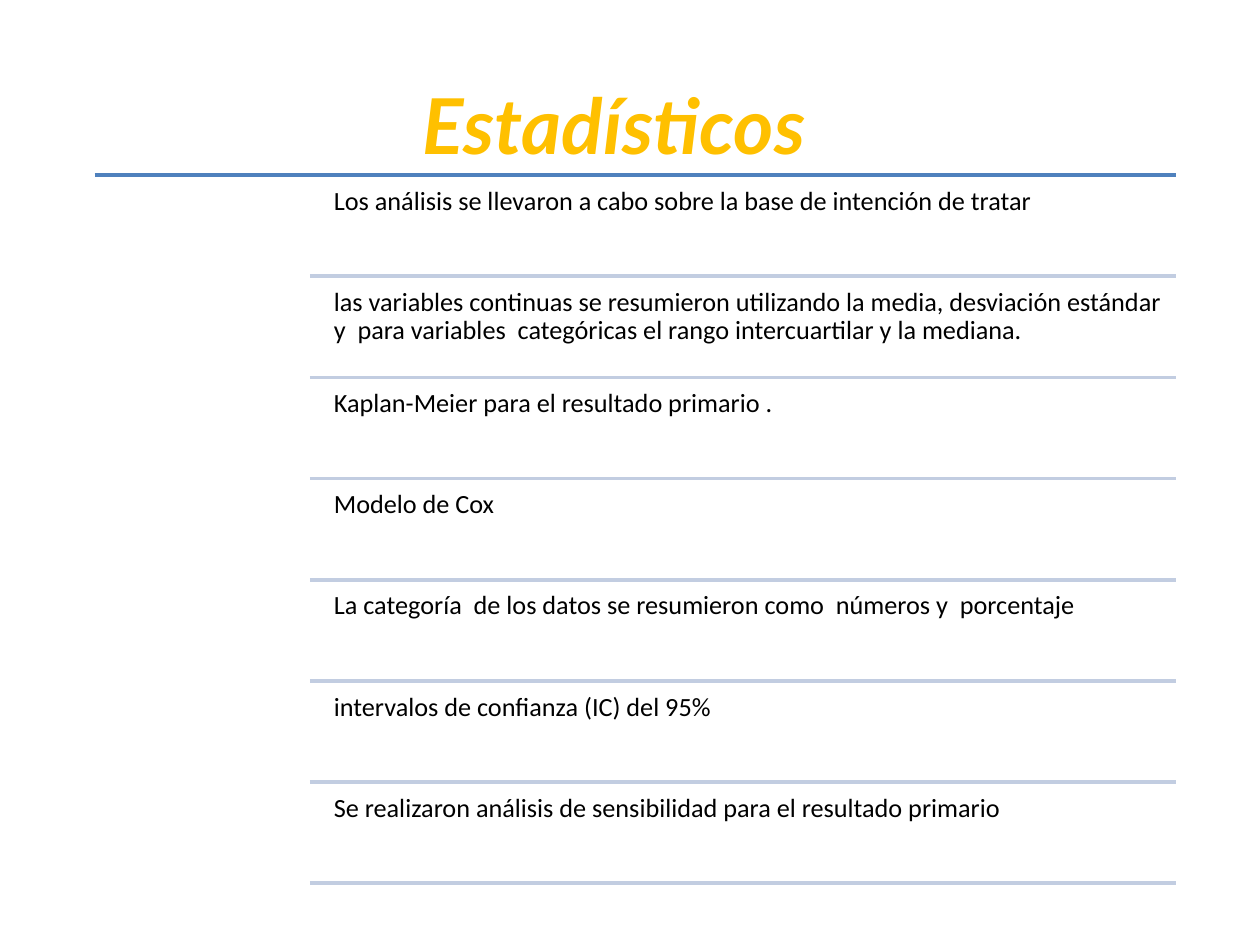
"""Build a slide that lists the statistical methods of a study between ruled lines."""
from lxml import etree
from pptx import Presentation
from pptx.dml.color import RGBColor
from pptx.enum import shapes, text
from pptx.oxml import ns
from pptx.util import Inches, Pt

TITLE = "Estadísticos "
METHODS = [
    "Los análisis se llevaron a cabo sobre la base de intención de tratar",
    "las variables continuas se resumieron utilizando la media, desviación estándar "
    "y  para variables  categóricas el rango intercuartilar y la mediana.",
    "Kaplan-Meier para el resultado primario .",
    "Modelo de Cox",
    "La categoría  de los datos se resumieron como  números y  porcentaje",
    "intervalos de confianza (IC) del 95%",
    "Se realizaron análisis de sensibilidad para el resultado primario",
]
COLORS = {"title": "FFC000", "text": "000000", "head": "4F81BD", "rule": "C2CDE1"}
TOP, BOTTOM = 1.39, 7.01
LEFT, INDENT, RIGHT = 0.75, 2.46, 9.33
TEXT_LEFT, GAP, HEIGHT, INSET = 2.59, 0.04, 0.77, 0.06


def write(frame, words, font="Calibri", size=15, color="text", bold=False,
          italic=False, align=text.PP_ALIGN.LEFT, anchor=text.MSO_ANCHOR.TOP,
          spacing=0.9):
    frame.word_wrap = True
    frame.auto_size = text.MSO_AUTO_SIZE.NONE
    frame.vertical_anchor = anchor
    para = frame.paragraphs[0]
    para.alignment, para.line_spacing = align, spacing
    run = para.add_run()
    run.text = words
    run.font.name, run.font.size = font, Pt(size)
    run.font.bold, run.font.italic = bold, italic
    run.font.color.rgb = RGBColor.from_string(COLORS[color])


def rule(slide, left, top, color):
    line = slide.shapes.add_connector(
        shapes.MSO_CONNECTOR.STRAIGHT,
        Inches(left), Inches(top), Inches(RIGHT), Inches(top))
    line.line.color.rgb = RGBColor.from_string(COLORS[color])
    line.line.width = Pt(2)
    etree.SubElement(line._element.spPr, ns.qn("a:effectLst"))


def method(slide, words, top):
    box = slide.shapes.add_textbox(
        Inches(TEXT_LEFT), Inches(top), Inches(RIGHT - TEXT_LEFT), Inches(HEIGHT))
    frame = box.text_frame
    frame.margin_left = frame.margin_right = Inches(INSET)
    frame.margin_top = frame.margin_bottom = Inches(INSET)
    write(frame, words)


def main():
    deck = Presentation()
    deck.slide_width, deck.slide_height = Inches(10), Inches(7.5)
    slide = deck.slides.add_slide(deck.slide_layouts[5])
    title = slide.shapes.title
    title.left, title.top = Inches(0.44), Inches(0.36)
    title.width, title.height = Inches(9), Inches(1.25)
    write(title.text_frame, TITLE, font="Lato", size=44, color="title", bold=True,
          italic=True, align=text.PP_ALIGN.CENTER, anchor=text.MSO_ANCHOR.MIDDLE,
          spacing=1.0)
    rule(slide, LEFT, TOP, "head")
    step = (BOTTOM - TOP) / len(METHODS)
    for row, words in enumerate(METHODS):
        top = TOP + row * step
        method(slide, words, top + GAP)
        rule(slide, INDENT, top + step, "rule")
    deck.save("out.pptx")


if __name__ == "__main__":
    main()
